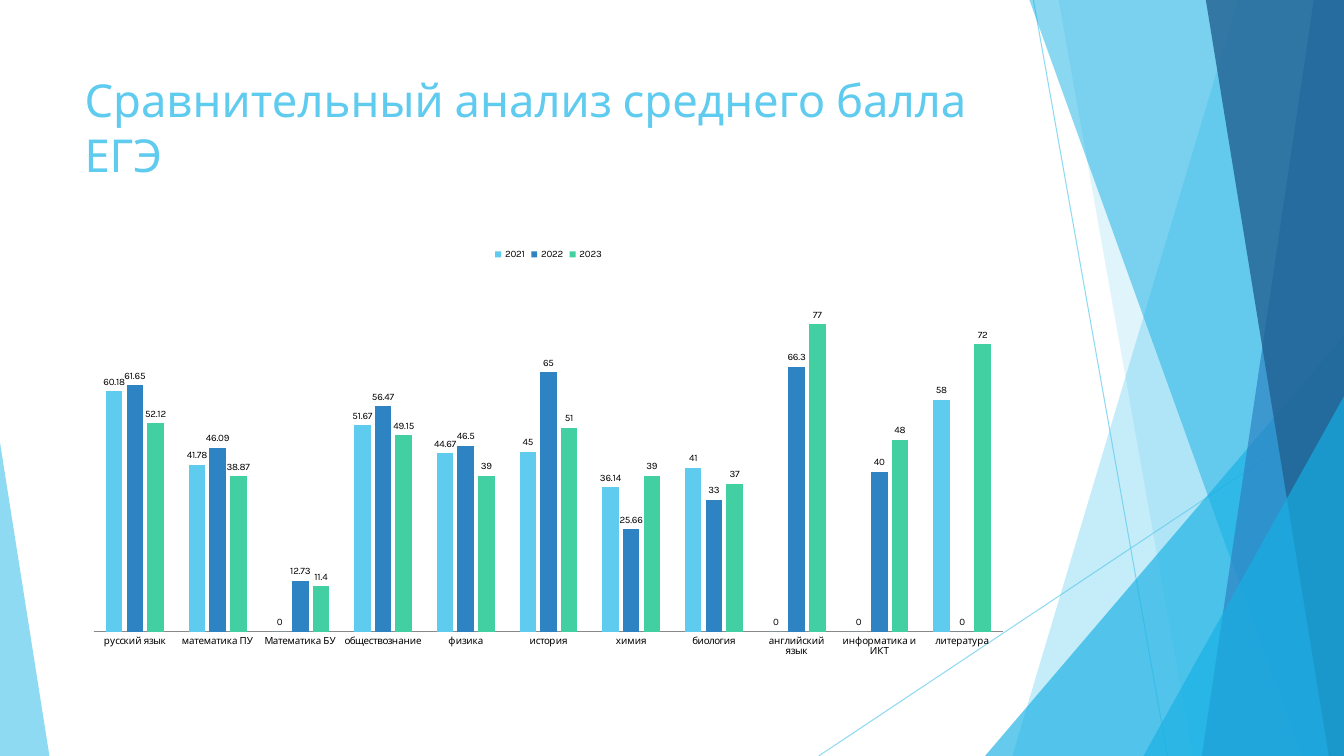
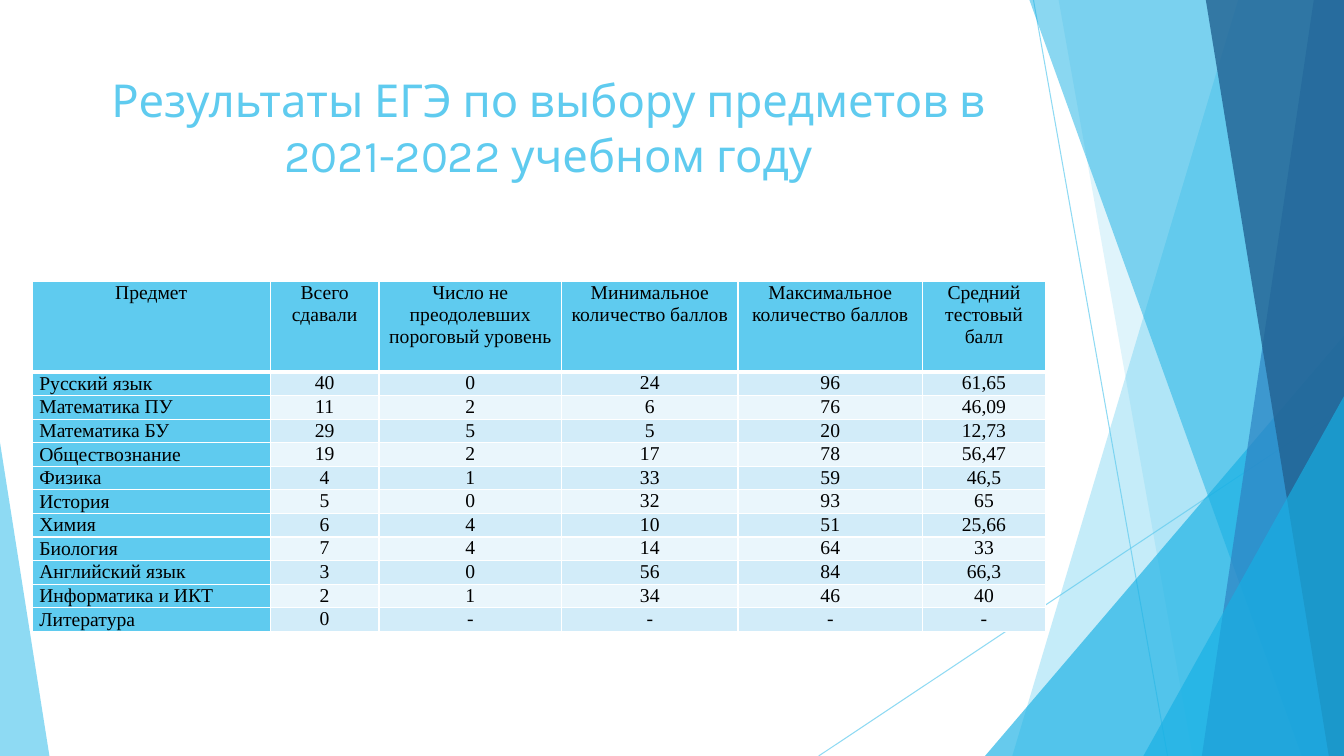
from lxml import etree
from pptx import Presentation
from pptx.chart.data import CategoryChartData
from pptx.dml.color import RGBColor
from pptx.enum.chart import XL_CHART_TYPE, XL_LABEL_POSITION, XL_LEGEND_POSITION, XL_TICK_MARK
from pptx.enum.shapes import MSO_CONNECTOR, MSO_SHAPE
from pptx.enum.text import MSO_ANCHOR, PP_ALIGN
from pptx.oxml.ns import qn
from pptx.util import Inches, Pt

CLUSTERED = XL_CHART_TYPE.COLUMN_CLUSTERED
OUTSIDE = XL_LABEL_POSITION.OUTSIDE_END
LEGEND_TOP = XL_LEGEND_POSITION.TOP
NO_TICK = XL_TICK_MARK.NONE
STRAIGHT = MSO_CONNECTOR.STRAIGHT
TRIANGLE = MSO_SHAPE.ISOSCELES_TRIANGLE
TOP, MIDDLE = MSO_ANCHOR.TOP, MSO_ANCHOR.MIDDLE
LEFT, CENTER = PP_ALIGN.LEFT, PP_ALIGN.CENTER

SKY = RGBColor(0x5F, 0xCB, 0xEF)
CYAN = RGBColor(0x17, 0xB0, 0xE4)
BLUE = RGBColor(0x2E, 0x83, 0xC3)
NAVY = RGBColor(0x22, 0x62, 0x92)
GREEN = RGBColor(0x42, 0xD0, 0xA2)
GRAY = RGBColor(0x89, 0x89, 0x89)
BLACK = RGBColor(0, 0, 0)
WHITE = RGBColor(0xFF, 0xFF, 0xFF)
ROW_TINTS = (RGBColor(0xD2, 0xEC, 0xF9), RGBColor(0xEA, 0xF6, 0xFC))

WIDTH, HEIGHT = 13.33, 7.5
DISPLAY_FONT, TABLE_FONT = "Karla", "Times New Roman"

SUBJECTS = ["русский язык", "математика ПУ", "Математика БУ", "обществознание",
            "физика", "история", "химия", "биология", "английский язык",
            "информатика и ИКТ", "литература"]
SCORES = [
    ("2021", SKY, (60.18, 41.78, 0, 51.67, 44.67, 45, 36.14, 41, 0, 0, 58)),
    ("2022", BLUE, (61.65, 46.09, 12.73, 56.47, 46.5, 65, 25.66, 33, 66.3, 40, 0)),
    ("2023", GREEN, (52.12, 38.87, 11.4, 49.15, 39, 51, 39, 37, 77, 48, 72)),
]
COLUMN_WIDTHS = (2.36, 1.08, 1.81, 1.75, 1.83, 1.22)
RESULTS = [
    ("Предмет", "Всего сдавали", "Число не преодолевших пороговый уровень",
     "Минимальное количество баллов", "Максимальное количество баллов",
     "Средний тестовый балл"),
    ("Русский язык", "40", "0", "24", "96", "61,65"),
    ("Математика ПУ", "11", "2", "6", "76", "46,09"),
    ("Математика БУ", "29", "5", "5", "20", "12,73"),
    ("Обществознание", "19", "2", "17", "78", "56,47"),
    ("Физика", "4", "1", "33", "59", "46,5"),
    ("История", "5", "0", "32", "93", "65"),
    ("Химия", "6", "4", "10", "51", "25,66"),
    ("Биология", "7", "4", "14", "64", "33"),
    ("Английский язык", "3", "0", "56", "84", "66,3"),
    ("Информатика и ИКТ", "2", "1", "34", "46", "40"),
    ("Литература", "0", "-", "-", "-", "-"),
]


def write(frame, text, font, size, color, align=LEFT, anchor=TOP, spacing=None):
    frame.word_wrap = True
    frame.vertical_anchor = anchor
    para = frame.paragraphs[0]
    para.alignment = align
    if spacing:
        para.line_spacing = Pt(spacing)
    span = para.add_run()
    span.text = text
    span.font.name = font
    span.font.size = Pt(size)
    span.font.color.rgb = color


def set_opacity(shape, percent):
    color = shape.element.spPr.find(".//" + qn("a:srgbClr"))
    etree.SubElement(color, qn("a:alpha")).set("val", str(percent * 1000))


def set_borders(cell, color, **points):
    """Draw cell borders; the keywords L, R, T and B give widths in points."""
    properties = cell._tc.get_or_add_tcPr()
    for side, width in points.items():
        line = etree.SubElement(properties, qn("a:ln" + side), w=str(Pt(width)))
        fill = etree.SubElement(line, qn("a:solidFill"))
        etree.SubElement(fill, qn("a:srgbClr"), val=str(color))


class Deck:
    def __init__(self):
        self.file = Presentation()
        self.file.slide_width = Inches(WIDTH)
        self.file.slide_height = Inches(HEIGHT)
        self.page = None

    def add_page(self, title, align=LEFT):
        self.page = self.file.slides.add_slide(self.file.slide_layouts[6])
        self.backdrop()
        box = self.page.shapes.add_textbox(Inches(0.74), Inches(0.67), Inches(9.4), Inches(1.44))
        write(box.text_frame, title, DISPLAY_FONT, 32.4, SKY, align=align)

    def backdrop(self):
        self.thin_line(10.25, 0, 11.58, HEIGHT)
        self.thin_line(WIDTH, 4.03, 8.12, HEIGHT)
        self.band(12.28, 10.04, SKY, 36)
        self.band(10.5, 11.83, SKY, 20)
        self.triangle(9.77, 3.33, WIDTH, CYAN, 66, apex=1)
        self.band(10.21, 12.91, CYAN, 50)
        self.band(13.03, 11.92, BLUE, 70)
        self.band(11.96, 13.18, NAVY, 80)
        self.triangle(11.34, 3.93, WIDTH, CYAN, 66, apex=1)
        self.triangle(0, 4.39, 0.49, SKY, 70, apex=0)

    def thin_line(self, x1, y1, x2, y2):
        line = self.page.shapes.add_connector(STRAIGHT, Inches(x1), Inches(y1), Inches(x2), Inches(y2))
        line.line.color.rgb = SKY
        line.line.width = Pt(0.75)
        set_opacity(line, 70)
        etree.SubElement(line.element.spPr, qn("a:effectLst"))

    def paint(self, shape, color, opacity):
        shape.shadow.inherit = False
        shape.fill.solid()
        shape.fill.fore_color.rgb = color
        shape.line.fill.background()
        set_opacity(shape, opacity)

    def band(self, top_x, bottom_x, color, opacity):
        """Fill from a slanted left edge to the right edge of the page."""
        outline = self.page.shapes.build_freeform(Inches(top_x), 0)
        corners = ((WIDTH, 0), (WIDTH, HEIGHT), (bottom_x, HEIGHT))
        outline.add_line_segments([(Inches(x), Inches(y)) for x, y in corners])
        self.paint(outline.convert_to_shape(), color, opacity)

    def triangle(self, left, top, right, color, opacity, apex):
        """Stand a triangle on the bottom edge; apex is 0 (left) to 1 (right)."""
        shape = self.page.shapes.add_shape(TRIANGLE, Inches(left), Inches(top),
                                           Inches(right - left), Inches(HEIGHT - top))
        shape.adjustments[0] = apex
        self.paint(shape, color, opacity)

    def column_chart(self, left, top, width, height, categories, series):
        data = CategoryChartData()
        data.categories = categories
        for name, _, values in series:
            data.add_series(name, values)
        chart = self.page.shapes.add_chart(CLUSTERED, Inches(left), Inches(top),
                                           Inches(width), Inches(height), data).chart
        chart.has_title = False
        chart.font.name = DISPLAY_FONT
        chart.font.size = Pt(7)
        chart.font.color.rgb = BLACK
        chart.has_legend = True
        chart.legend.position = LEGEND_TOP
        chart.legend.include_in_layout = False
        chart.category_axis.major_tick_mark = NO_TICK
        chart.category_axis.format.line.color.rgb = GRAY
        chart.value_axis.visible = False
        chart.value_axis.has_major_gridlines = False
        chart.value_axis.minimum_scale = 0
        chart.value_axis.maximum_scale = 90
        plot = chart.plots[0]
        plot.vary_by_categories = False
        plot.gap_width = 150
        plot.overlap = -25
        plot.has_data_labels = True
        plot.data_labels.show_value = True
        plot.data_labels.position = OUTSIDE
        for bars, (_, color, _) in zip(plot.series, series):
            bars.format.fill.solid()
            bars.format.fill.fore_color.rgb = color

    def table(self, left, top, widths, header_height, body_height, rows):
        table = self.page.shapes.add_table(
            len(rows), len(widths), Inches(left), Inches(top),
            Inches(sum(widths)), Inches(header_height + body_height)).table
        for column, width in zip(table.columns, widths):
            column.width = Inches(width)
        for i, row in enumerate(rows):
            table.rows[i].height = Inches(body_height / (len(rows) - 1) if i else header_height)
            for j, text in enumerate(row):
                self.cell(table.cell(i, j), text, i, j)

    def cell(self, cell, text, row, column):
        cell.margin_left = cell.margin_right = Inches(0.07)
        cell.margin_top = cell.margin_bottom = 0
        set_borders(cell, WHITE, L=1, R=1, T=3 if row == 1 else 1, B=1 if row else 3)
        cell.fill.solid()
        cell.fill.fore_color.rgb = ROW_TINTS[(row - 1) % 2] if row and column else SKY
        is_subject = row > 0 and column == 0
        write(cell.text_frame, text, TABLE_FONT, 14, BLACK,
              align=LEFT if is_subject else CENTER,
              spacing=None if is_subject else 15.8)
        cell.vertical_anchor = MIDDLE if is_subject else TOP


def main():
    deck = Deck()
    deck.add_page("Сравнительный анализ среднего балла ЕГЭ")
    deck.column_chart(0.74, 2.36, 9.4, 4.24, SUBJECTS, SCORES)
    deck.add_page("Результаты ЕГЭ по выбору предметов в 2021-2022 учебном году", align=CENTER)
    deck.table(0.32, 2.79, COLUMN_WIDTHS, 0.9, 2.48, RESULTS)
    deck.file.save("out.pptx")


if __name__ == "__main__":
    main()
